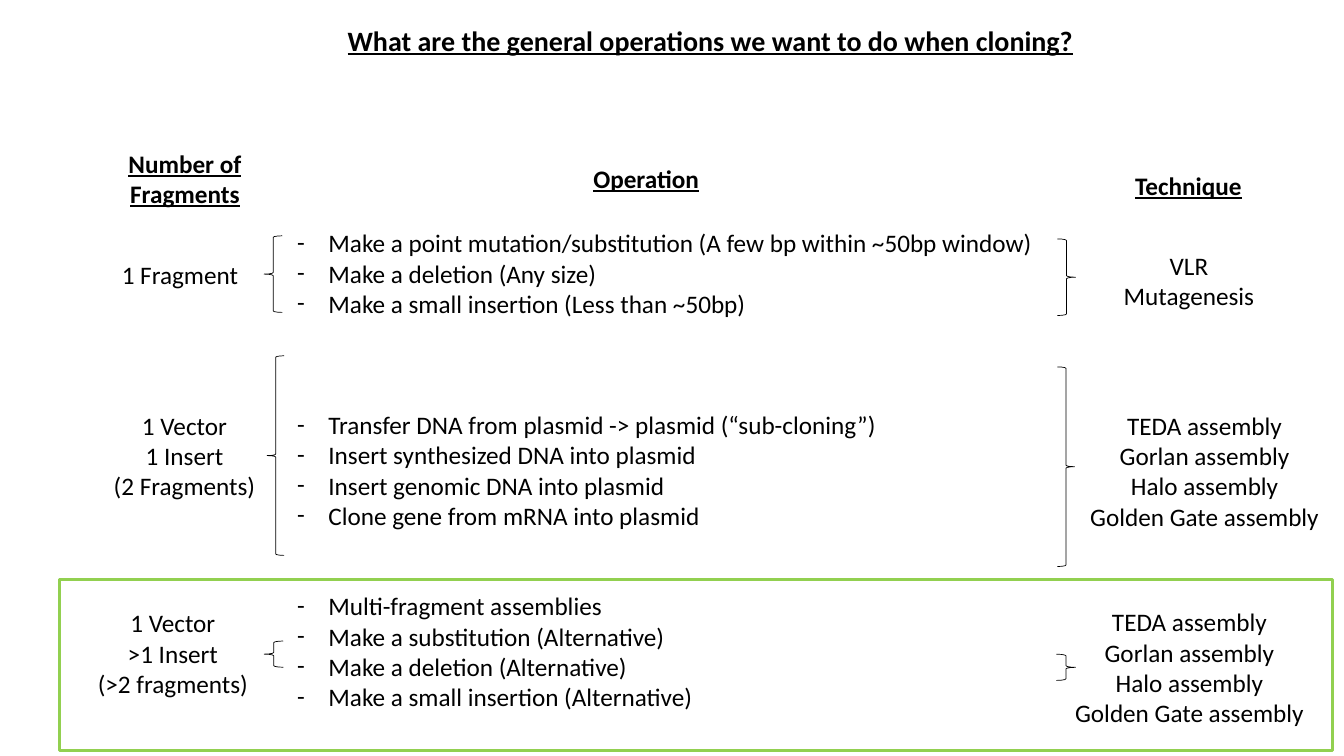
"""Build a slide that matches cloning operations with fragment counts and techniques."""
import pptx
import pptx.dml.color
import pptx.enum.shapes
import pptx.enum.text
import pptx.oxml.ns
import pptx.util
import lxml.etree

THEME = {
    "font": "Calibri",
    "text": pptx.dml.color.RGBColor.from_string("000000"),
    "highlight": pptx.dml.color.RGBColor.from_string("92D050"),
    "title_size": 20,
    "body_size": 18,
    "brace_line": 0.5,
    "frame_line": 2.25,
}
GRID_COLUMNS = 40
SHAPES = pptx.enum.shapes.MSO_SHAPE
ALIGN = pptx.enum.text.PP_ALIGN

presentation = pptx.Presentation()
presentation.slide_width = pptx.util.Inches(13.333)
presentation.slide_height = pptx.util.Inches(7.5)
slide = presentation.slides.add_slide(presentation.slide_layouts[6])
cell = presentation.slide_width / GRID_COLUMNS


def add_text(text, box, size=THEME["body_size"], heading=False, align=ALIGN.CENTER, wrap=False):
    """Add a text box at a grid position and return its text frame."""
    frame = slide.shapes.add_textbox(*(round(length * cell) for length in box)).text_frame
    frame.word_wrap = wrap
    frame.text = text
    for paragraph in frame.paragraphs:
        paragraph.alignment = align
        for run in paragraph.runs:
            run.font.name = THEME["font"]
            run.font.size = pptx.util.Pt(size)
            run.font.color.rgb = THEME["text"]
            run.font.bold = heading
            run.font.underline = heading
    return frame


def add_outline(kind, box, color, weight):
    """Add an unfilled outline shape at a grid position."""
    shape = slide.shapes.add_shape(kind, *(round(length * cell) for length in box))
    shape.shadow.inherit = False
    shape.fill.background()
    shape.line.color.rgb = color
    shape.line.width = pptx.util.Pt(weight)
    return shape


add_text("What are the general operations we want to do when cloning?",
         (10.05, 0.54, 23.1, 1.32), THEME["title_size"], True, ALIGN.LEFT)

add_outline(SHAPES.RECTANGLE, (1.77, 17.25, 37.89, 5.1), THEME["highlight"], THEME["frame_line"])

headings = [
    ("Number of\nFragments", (3.51, 4.26, 3.99, 2.13)),
    ("Operation", (17.34, 4.71, 3.78, 1.2)),
    ("Technique", (33.48, 4.92, 3.78, 1.2)),
]
for text, box in headings:
    add_text(text, box, heading=True)

operation_groups = [
    (0, ["Make a point mutation/substitution (A few bp within ~50bp window)",
         "Make a deletion (Any size)",
         "Make a small insertion (Less than ~50bp)"]),
    (65, ["Transfer DNA from plasmid -> plasmid (“sub-cloning”)",
          "Insert synthesized DNA into plasmid",
          "Insert genomic DNA into plasmid",
          "Clone gene from mRNA into plasmid"]),
    (43, ["Multi-fragment assemblies",
          "Make a substitution (Alternative)",
          "Make a deletion (Alternative)",
          "Make a small insertion (Alternative)"]),
]
operations = [(gap if index == 0 else 0, text)
              for gap, group in operation_groups for index, text in enumerate(group)]
operation_frame = add_text("\n".join(text for gap, text in operations),
                           (8.55, 6.63, 22.92, 15.75), align=ALIGN.LEFT, wrap=True)
indent = pptx.util.Inches(0.31)
for paragraph, (gap, text) in zip(operation_frame.paragraphs, operations):
    paragraph.space_before = pptx.util.Pt(gap)
    properties = paragraph._p.get_or_add_pPr()
    properties.set("marL", str(indent))
    properties.set("indent", str(-indent))
    for tag, name, value in (("a:buFont", "typeface", THEME["font"]), ("a:buChar", "char", "-")):
        lxml.etree.SubElement(properties, pptx.oxml.ns.qn(tag)).set(name, value)

assemblies = "TEDA assembly\nGorlan assembly\nHalo assembly\nGolden Gate assembly"
labels = [
    ("1 Fragment", (2.73, 7.56, 5.25, 1.2)),
    ("1 Vector\n1 Insert\n(2 Fragments)", (3.06, 12.06, 4.86, 3.03)),
    ("1 Vector\n>1 Insert\n(>2 fragments)", (2.58, 17.94, 5.13, 3.03)),
    ("VLR\nMutagenesis", (32.76, 7.29, 5.25, 2.13)),
    (assemblies, (32.04, 12.06, 7.62, 3.93)),
    (assemblies, (31.59, 17.91, 7.62, 3.93)),
]
for text, box in labels:
    add_text(text, box)

brace_rows = [
    ((7.86, 7.02), (31.47, 7.11), (0.54, 2.28)),
    ((7.95, 10.59), (31.47, 10.92), (0.51, 5.94)),
    ((7.86, 19.08), (31.44, 19.47), (0.57, 0.78)),
]
for left_corner, right_corner, size in brace_rows:
    for corner, rotation in ((left_corner, 0), (right_corner, 180)):
        brace = add_outline(SHAPES.LEFT_BRACE, corner + size, THEME["text"], THEME["brace_line"])
        brace.rotation = rotation

presentation.save("out.pptx")
